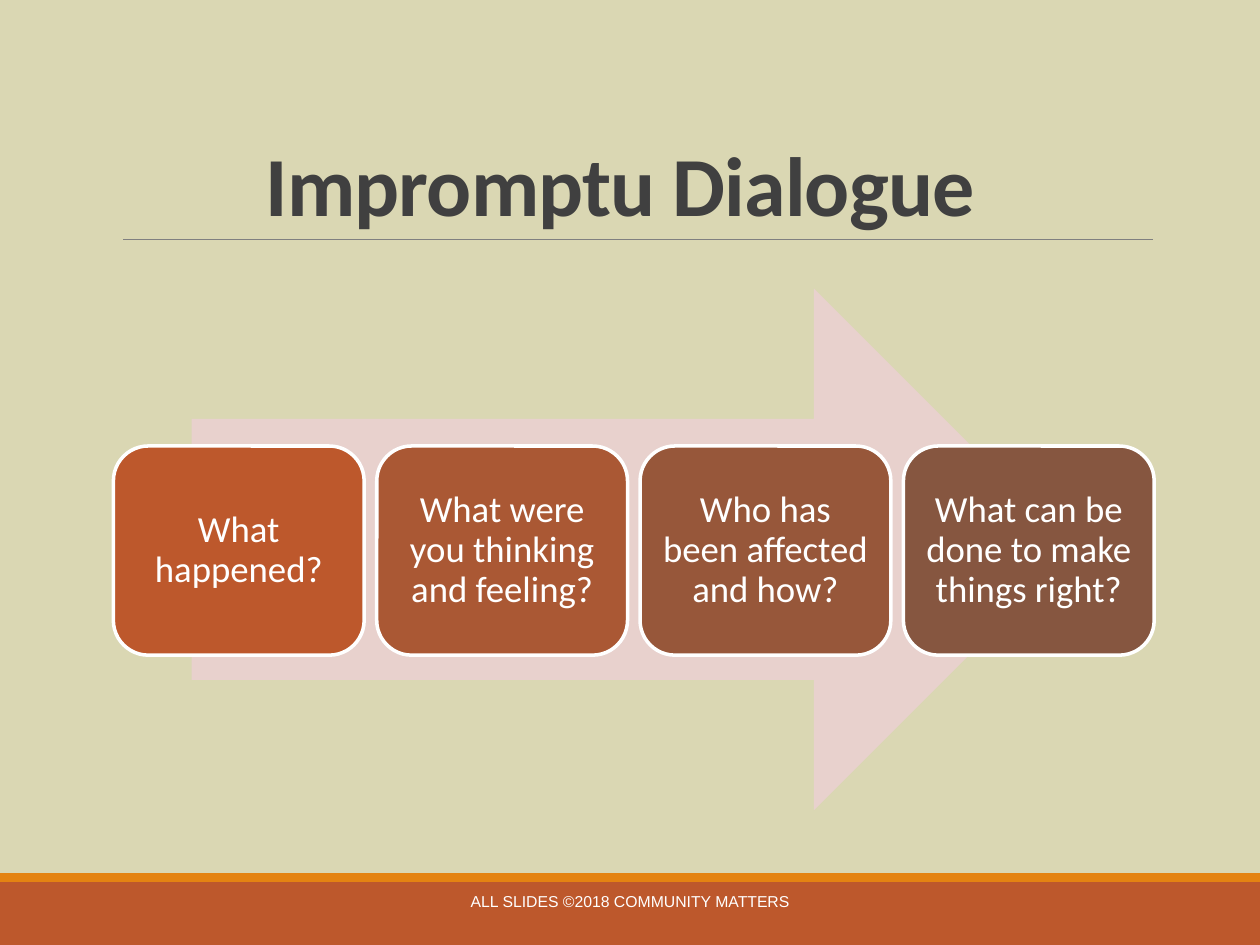
from pptx import Presentation
from pptx.dml.color import RGBColor
from pptx.enum.shapes import MSO_CONNECTOR, MSO_SHAPE
from pptx.enum.text import MSO_ANCHOR, PP_ALIGN
from pptx.oxml.ns import qn
from pptx.util import Inches, Pt
from lxml import etree

HUES = {
    "back": "DAD7B3",
    "base": "BD582C",
    "strip": "E48312",
    "rule": "808080",
    "title": "404040",
    "white": "FFFFFF",
    "arrow": "E8D1CD",
}
STEPS = [
    ("What happened?", "BD582C"),
    ("What were you thinking and feeling?", "AA5834"),
    ("Who has been affected and how?", "97573A"),
    ("What can be done to make things right?", "865640"),
]


def tint(code):
    return RGBColor.from_string(code)


class Deck:
    def __init__(self):
        self.show = Presentation()
        self.show.slide_width = Inches(10)
        self.show.slide_height = Inches(7.5)
        self.slide = self.show.slides.add_slide(self.show.slide_layouts[6])
        self.slide.background.fill.solid()
        self.slide.background.fill.fore_color.rgb = tint(HUES["back"])

    def shape(self, kind, area, fill, edge=None):
        item = self.slide.shapes.add_shape(kind, *map(Inches, area))
        item.shadow.inherit = False
        item.fill.solid()
        item.fill.fore_color.rgb = tint(fill)
        if edge:
            item.line.color.rgb = tint(edge)
            item.line.width = Pt(2)
        else:
            item.line.fill.background()
        return item

    def line(self, start, end, hue):
        item = self.slide.shapes.add_connector(
            MSO_CONNECTOR.STRAIGHT, *map(Inches, start + end))
        item.line.color.rgb = tint(hue)
        item.line.width = Pt(0.5)
        etree.SubElement(item._element.spPr, qn("a:effectLst"))

    def label(self, item, words, size, hue, face="Calibri", bold=False,
              align=PP_ALIGN.CENTER, anchor=MSO_ANCHOR.MIDDLE,
              pads=(0.09, 0.09, 0.09, 0.09), space=1.0):
        frame = item.text_frame
        frame.word_wrap = True
        frame.vertical_anchor = anchor
        (frame.margin_left, frame.margin_top,
         frame.margin_right, frame.margin_bottom) = map(Inches, pads)
        para = frame.paragraphs[0]
        para.text = words
        para.alignment = align
        para.line_spacing = space
        para.font.name = face
        para.font.size = Pt(size)
        para.font.bold = bold
        para.font.color.rgb = tint(hue)
        return para

    def text(self, area, words, size, hue, **style):
        item = self.slide.shapes.add_textbox(*map(Inches, area))
        return self.label(item, words, size, hue, **style)

    def step(self, area, words, fill):
        item = self.shape(MSO_SHAPE.ROUNDED_RECTANGLE, area, fill, HUES["white"])
        self.label(item, words, 21, HUES["white"], space=0.9)


def main():
    deck = Deck()
    deck.shape(MSO_SHAPE.RECTANGLE, (0, 7, 10, 0.5), HUES["base"])
    deck.shape(MSO_SHAPE.RECTANGLE, (0, 6.93, 10, 0.07), HUES["strip"])
    deck.line((0.98, 1.9), (9.15, 1.9), HUES["rule"])
    title = deck.text((0.9, 0.31, 8.25, 1.59), "Impromptu Dialogue", 48,
                      HUES["title"], bold=True, align=PP_ALIGN.LEFT,
                      anchor=MSO_ANCHOR.BOTTOM, pads=(1.21, 0.05, 0.1, 0.05),
                      space=0.85)
    title.runs[0].font._element.set("spc", "-50")
    deck.text((3.02, 7.06, 3.96, 0.4), "ALL SLIDES ©2018 COMMUNITY MATTERS",
              9, HUES["white"], face="Arial", anchor=MSO_ANCHOR.TOP,
              pads=(0.1, 0.02, 0.1, 0))
    deck.shape(MSO_SHAPE.RIGHT_ARROW, (1.52, 2.29, 7.01, 4.14), HUES["arrow"])
    wide, gap = 1.99, 0.1
    for spot, (words, fill) in enumerate(STEPS):
        deck.step((0.9 + spot * (wide + gap), 3.54, wide, 1.66), words, fill)
    deck.show.save("out.pptx")


if __name__ == "__main__":
    main()
